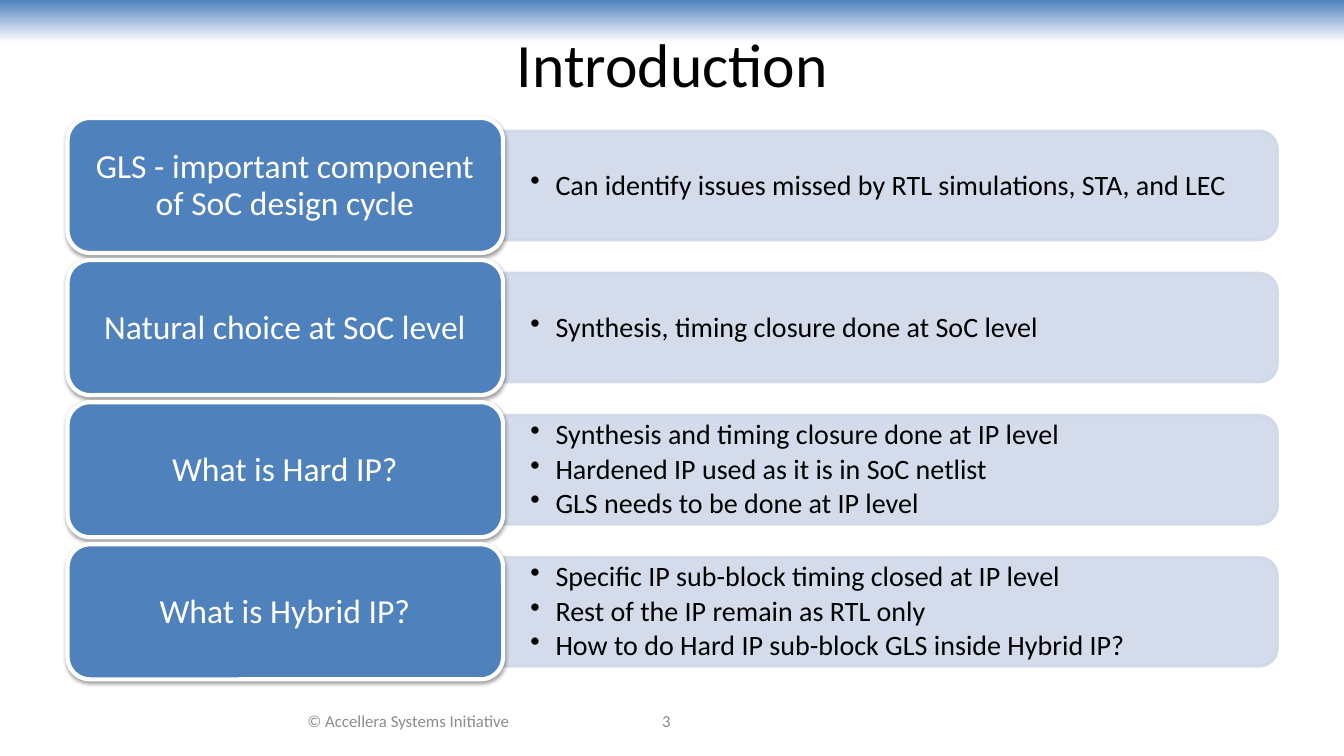
from dataclasses import dataclass

from lxml import etree
from pptx import Presentation
from pptx.dml.color import RGBColor
from pptx.enum.shapes import MSO_SHAPE
from pptx.enum.text import MSO_ANCHOR, PP_ALIGN
from pptx.oxml import parse_xml
from pptx.oxml.ns import nsdecls, qn
from pptx.shapes.autoshape import Shape
from pptx.slide import Slide
from pptx.util import Inches, Pt

RECT = MSO_SHAPE.RECTANGLE
ROUND = MSO_SHAPE.ROUNDED_RECTANGLE
TAB = MSO_SHAPE.ROUND_2_SAME_RECTANGLE
MIDDLE = MSO_ANCHOR.MIDDLE
CENTER = PP_ALIGN.CENTER
LEFT = PP_ALIGN.LEFT

BLUE = RGBColor(0x4F, 0x81, 0xBD)
PALE = RGBColor(0xD0, 0xD8, 0xE8)
WHITE = RGBColor(0xFF, 0xFF, 0xFF)
BLACK = RGBColor(0, 0, 0)
GRAY = RGBColor(0x8C, 0x8C, 0x8C)
FONT = "Calibri"


@dataclass
class Box:
    x: float
    y: float
    w: float
    h: float


@dataclass
class Style:
    size: float
    color: RGBColor
    align: PP_ALIGN = CENTER
    line: float = 1.0
    after: float = 0
    bullet: bool = False
    pad_x: float = 0.1
    pad_y: float = 0.05


@dataclass
class Row:
    label: str
    points: list[str]


TITLE = Style(44, BLACK)
LABEL = Style(24, WHITE, line=0.9, after=8.4)
POINT = Style(20, BLACK, LEFT, 0.9, 3, True, 0.27, 0.14)
FOOT = Style(12, GRAY)

ROWS = [
    Row("GLS - important component of SoC design cycle",
        ["Can identify issues missed by RTL simulations, STA, and LEC"]),
    Row("Natural choice at SoC level",
        ["Synthesis, timing closure done at SoC level"]),
    Row("What is Hard IP?",
        ["Synthesis and timing closure done at IP level",
         "Hardened IP used as it is in SoC netlist",
         "GLS needs to be done at IP level"]),
    Row("What is Hybrid IP?",
        ["Specific IP sub-block timing closed at IP level",
         "Rest of the IP remain as RTL only",
         "How to do Hard IP sub-block GLS inside Hybrid IP?"]),
]
TOP = 1.17
STEP = 1.41


def add_text(slide: Slide, box: Box, lines: list[str], style: Style) -> None:
    shape = slide.shapes.add_textbox(
        Inches(box.x), Inches(box.y), Inches(box.w), Inches(box.h))
    frame = shape.text_frame
    frame.word_wrap = True
    frame.vertical_anchor = MIDDLE
    frame.margin_left = frame.margin_right = Inches(style.pad_x)
    frame.margin_top = frame.margin_bottom = Inches(style.pad_y)
    for i, line in enumerate(lines):
        para = frame.add_paragraph() if i else frame.paragraphs[0]
        para.alignment = style.align
        para.line_spacing = style.line
        para.space_after = Pt(style.after)
        if style.bullet:
            para.level = 1
            props = para._p.get_or_add_pPr()
            props.set("marL", str(Inches(0.25)))
            props.set("indent", str(Inches(-0.25)))
            etree.SubElement(props, qn("a:buChar")).set("char", "•")
        run = para.add_run()
        run.text = line
        run.font.name = FONT
        run.font.size = Pt(style.size)
        run.font.color.rgb = style.color


def add_block(slide: Slide, kind: MSO_SHAPE, box: Box, fill: RGBColor,
              edge: RGBColor, width: float) -> Shape:
    shape = slide.shapes.add_shape(
        kind, Inches(box.x), Inches(box.y), Inches(box.w), Inches(box.h))
    shape.shadow.inherit = False
    shape.fill.solid()
    shape.fill.fore_color.rgb = fill
    shape.line.color.rgb = edge
    shape.line.width = Pt(width)
    return shape


def set_alpha(shape: Shape) -> None:
    for color in shape._element.spPr.iter(qn("a:srgbClr")):
        etree.SubElement(color, qn("a:alpha")).set("val", "90000")


def add_shadow(shape: Shape) -> None:
    effects = shape._element.spPr.find(qn("a:effectLst"))
    effects.append(parse_xml(
        f'<a:outerShdw {nsdecls("a")} blurRad="{Pt(3.1)}" dist="{Pt(1.6)}" '
        'dir="5400000" rotWithShape="0"><a:srgbClr val="000000">'
        '<a:alpha val="38000"/></a:srgbClr></a:outerShdw>'))


def add_band(slide: Slide) -> None:
    band = slide.shapes.add_shape(RECT, 0, 0, Inches(13.33), Inches(0.42))
    band.shadow.inherit = False
    band.line.fill.background()
    band.fill.gradient()
    band.fill.gradient_angle = 270
    for stop, color, place in zip(band.fill.gradient_stops, (BLUE, WHITE), (0, 1)):
        stop.color.rgb = color
        stop.position = place


def add_row(slide: Slide, row: Row, y: float) -> None:
    # Bar turned on its side, with its bullets
    bar = add_block(slide, TAB, Box(8.29, y - 3.17, 1.08, 7.68), PALE, PALE, 2)
    bar.rotation = 90
    set_alpha(bar)
    add_text(slide, Box(4.99, y + 0.19, 7.63, 0.97), row.points, POINT)

    # Label
    card = add_block(slide, ROUND, Box(0.67, y, 4.32, 1.34), BLUE, WHITE, 3)
    add_shadow(card)
    add_text(slide, Box(0.73, y + 0.07, 4.19, 1.21), [row.label], LABEL)


def main() -> None:
    deck = Presentation()
    deck.slide_width = Inches(13.33)
    deck.slide_height = Inches(7.5)
    slide = deck.slides.add_slide(deck.slide_layouts[6])

    # Heading
    add_band(slide)
    add_text(slide, Box(0.67, 0, 12, 1.25), ["Introduction"], TITLE)

    # Topic rows
    for i, row in enumerate(ROWS):
        add_row(slide, row, TOP + i * STEP)

    # Footer
    add_text(slide, Box(2.44, 6.95, 3.22, 0.4),
             ["© Accellera Systems Initiative"], FOOT)
    add_text(slide, Box(5.33, 6.95, 2.56, 0.4), ["3"], FOOT)
    deck.save("out.pptx")


if __name__ == "__main__":
    main()
